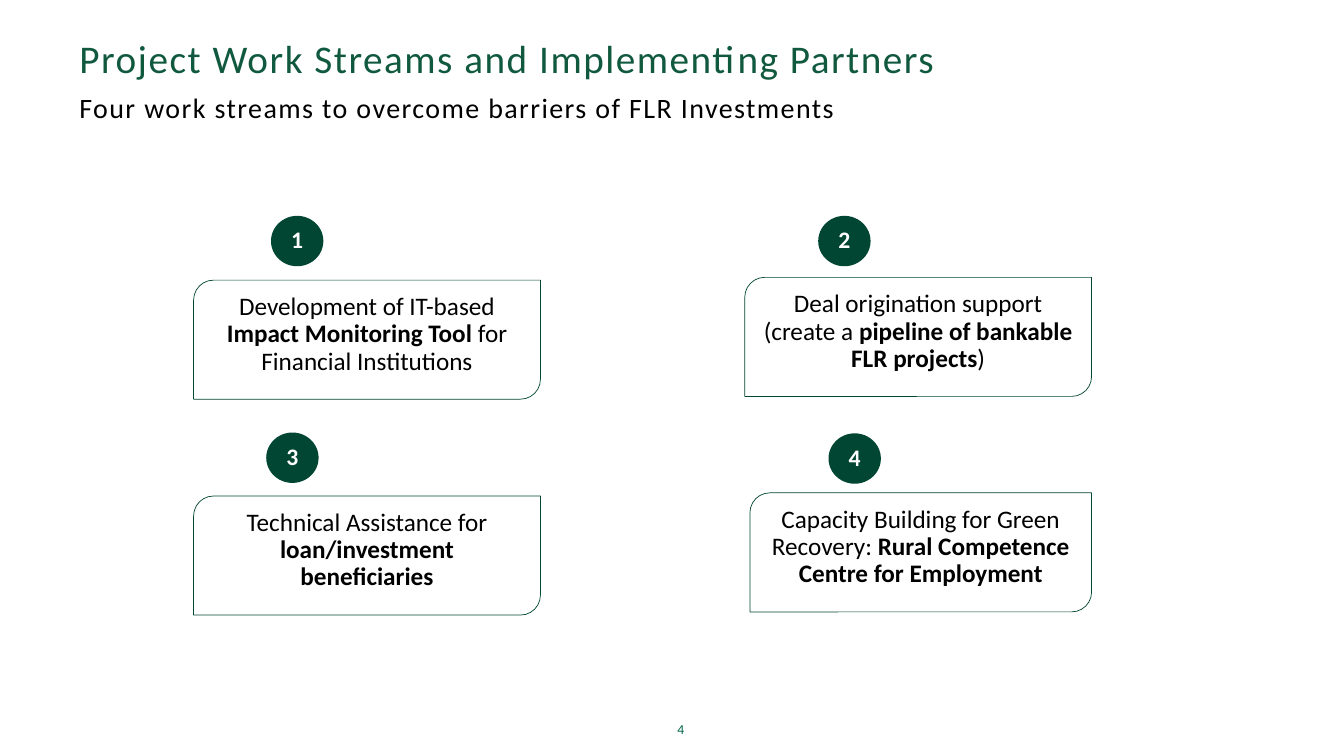
from dataclasses import dataclass

from pptx import Presentation
from pptx import util as u
from pptx.dml.color import RGBColor
from pptx.enum import shapes, text


@dataclass(frozen=True)
class Theme:
    font: str = "Calibri"
    title_green: RGBColor = RGBColor(0x10, 0x59, 0x3F)
    dark_green: RGBColor = RGBColor(0x00, 0x46, 0x32)
    number_green: RGBColor = RGBColor(0x00, 0x68, 0x4C)
    black: RGBColor = RGBColor(0, 0, 0)
    white: RGBColor = RGBColor(255, 255, 255)
    title_size: float = 28
    subtitle_size: float = 20
    card_size: float = 18
    badge_size: float = 16.9
    page_number_size: float = 9.8


THEME = Theme()
CARD_HEIGHT = 3.0
BADGE_EXTENT = (1.32, 1.27)

# Per work stream: badge position, card position, card width (cm), text spans (text, bold)
WORK_STREAMS = [
    ((6.83, 5.44), (4.88, 7.06), 8.74,
     [("Development of IT-based ", False), ("Impact Monitoring Tool ", True),
      ("for Financial Institutions", False)]),
    ((20.62, 5.44), (18.77, 6.99), 8.74,
     [("Deal origination support (create a ", False),
      ("pipeline of bankable FLR projects", True), (")", False)]),
    ((6.71, 10.9), (4.88, 12.5), 8.74,
     [("Technical Assistance for ", False), ("loan/investment beneficiaries", True)]),
    ((20.88, 10.92), (18.9, 12.42), 8.61,
     [("Capacity Building for Green Recovery: ", False),
      ("Rural Competence Centre for Employment", True)]),
]


def write_text(box, spans, *, size, color, align=text.PP_ALIGN.LEFT,
               anchor=text.MSO_ANCHOR.TOP, insets=(0.15, 0.15),
               line_spacing=1.0, tracking=None):
    """Fill a box with one paragraph of (text, bold) spans; insets are in cm."""
    frame = box.text_frame
    frame.word_wrap = True
    frame.vertical_anchor = anchor
    frame.margin_left = frame.margin_right = u.Cm(insets[0])
    frame.margin_top = frame.margin_bottom = u.Cm(insets[1])
    para = frame.paragraphs[0]
    para.alignment = align
    para.line_spacing = line_spacing
    for words, bold in spans:
        span = para.add_run()
        span.text = words
        span.font.name = THEME.font
        span.font.size = u.Pt(size)
        span.font.bold = bold
        span.font.color.rgb = color
        if tracking:
            span._r.get_or_add_rPr().set("spc", str(round(tracking * 100)))


def add_label(page, words, left, top, width, height, **style):
    box = page.shapes.add_textbox(u.Cm(left), u.Cm(top), u.Cm(width), u.Cm(height))
    write_text(box, [(words, False)], **style)


def add_panel(page, kind, position, extent, spans, *, fill=None, line=None, **style):
    box = page.shapes.add_shape(kind, *map(u.Cm, position + extent))
    box.shadow.inherit = False
    if fill is None:
        box.fill.background()
    else:
        box.fill.solid()
        box.fill.fore_color.rgb = fill
    if line is None:
        box.line.fill.background()
    else:
        box.line.color.rgb = line
        box.line.width = u.Pt(0.5)
    write_text(box, spans, align=text.PP_ALIGN.CENTER, insets=(0.3, 0.2),
               line_spacing=0.9, **style)


def add_card(page, position, width, spans):
    add_panel(page, shapes.MSO_SHAPE.ROUND_2_DIAG_RECTANGLE, position,
              (width, CARD_HEIGHT), spans, line=THEME.dark_green,
              size=THEME.card_size, color=THEME.black)


def add_badge(page, position, number):
    add_panel(page, shapes.MSO_SHAPE.OVAL, position, BADGE_EXTENT,
              [(str(number), True)], fill=THEME.dark_green,
              size=THEME.badge_size, color=THEME.white,
              anchor=text.MSO_ANCHOR.MIDDLE)


def main():
    deck = Presentation()
    deck.slide_width, deck.slide_height = u.Cm(33.87), u.Cm(19.05)
    page = deck.slides.add_slide(deck.slide_layouts[6])

    # Headings
    add_label(page, "Project Work Streams and Implementing Partners",
              1.85, 0.71, 30.18, 1.24, size=THEME.title_size,
              color=THEME.title_green, tracking=1.1)
    add_label(page, "Four work streams to overcome barriers of FLR Investments",
              1.85, 2.13, 30.18, 0.97, size=THEME.subtitle_size,
              color=THEME.black, tracking=1)

    # Numbered work streams
    for number, (badge, card, width, spans) in enumerate(WORK_STREAMS, start=1):
        add_card(page, card, width, spans)
        add_badge(page, badge, number)

    # Page number
    add_label(page, "4", 16.92, 18.06, 0.94, 0.66, size=THEME.page_number_size,
              color=THEME.number_green, anchor=text.MSO_ANCHOR.MIDDLE,
              line_spacing=0.9)

    deck.save("out.pptx")


if __name__ == "__main__":
    main()
